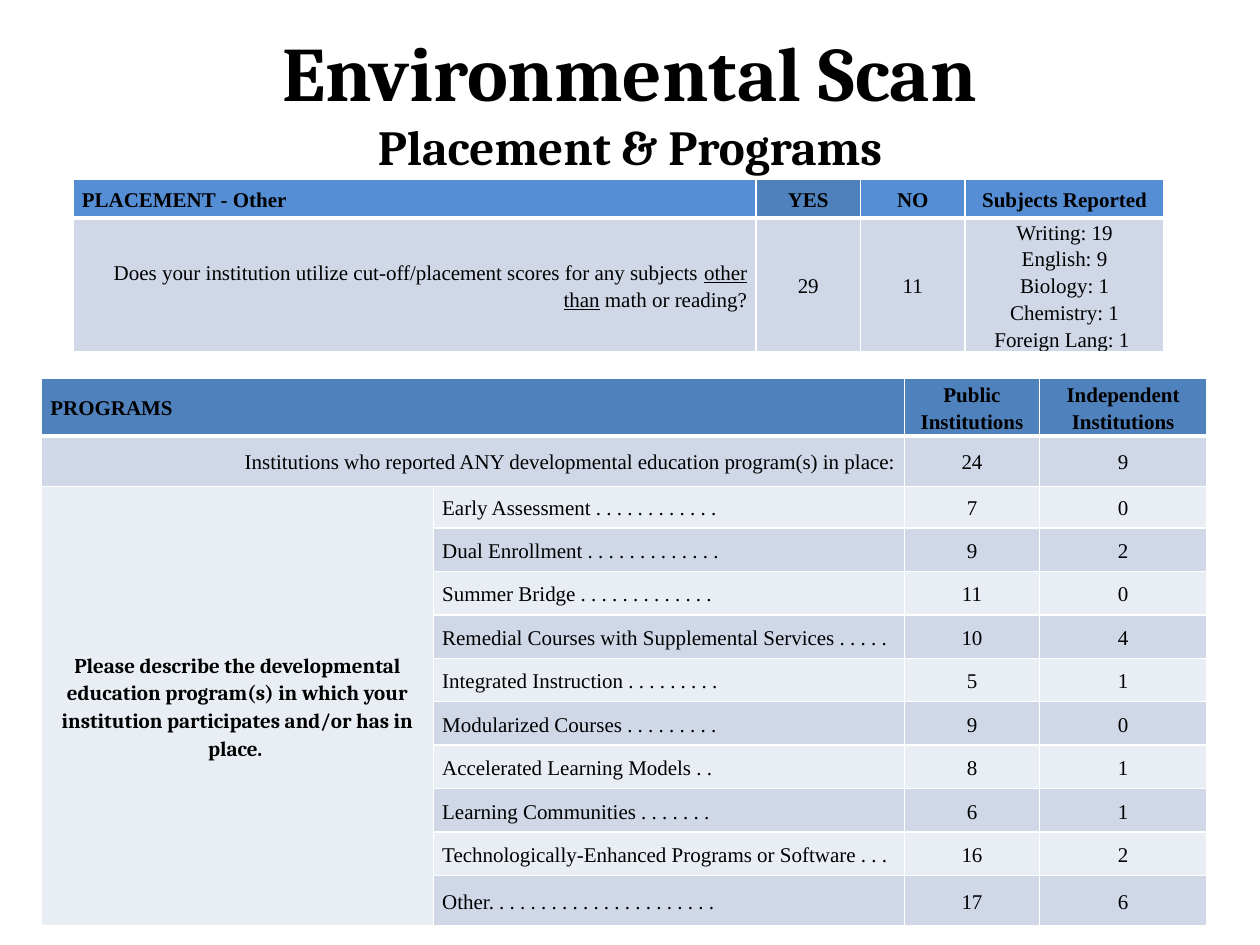
from lxml import etree
from pptx import Presentation
from pptx.dml.color import RGBColor
from pptx.enum import text
from pptx.oxml import ns
from pptx.util import Inches, Pt

COLORS = {"ink": "000000", "rule": "FFFFFF", "header": "4F81BD",
          "header_light": "558ED5", "band": "D0D8E8", "pale": "E9EDF4"}
LEFT, CENTER, RIGHT = text.PP_ALIGN.LEFT, text.PP_ALIGN.CENTER, text.PP_ALIGN.RIGHT
CELL_FORMAT = {"margin_left": Inches(0.07), "margin_right": Inches(0.07),
               "margin_top": 0, "margin_bottom": 0,
               "vertical_anchor": text.MSO_ANCHOR.MIDDLE}


def add_grid(left, top, columns, heights):
    grid = slide.shapes.add_table(
        len(heights), len(columns), Inches(left), Inches(top),
        Inches(sum(columns)), Inches(sum(heights))).table
    for column, width in zip(grid.columns, columns):
        column.width = Inches(width)
    for row, height in zip(grid.rows, heights):
        row.height = Inches(height)
    return grid


def fill_cell(cell, words, align, fill, bold=False, font="Times New Roman", bottom=1):
    for name, value in CELL_FORMAT.items():
        setattr(cell, name, value)
    properties = cell._tc.get_or_add_tcPr()
    for side, width in {"L": 1, "R": 1, "T": 1, "B": bottom}.items():
        line = etree.SubElement(properties, ns.qn(f"a:ln{side}"), w=str(Pt(width)))
        solid = etree.SubElement(line, ns.qn("a:solidFill"))
        etree.SubElement(solid, ns.qn("a:srgbClr"), val=COLORS["rule"])
    cell.fill.solid()
    cell.fill.fore_color.rgb = RGBColor.from_string(COLORS[fill])
    for index, sentence in enumerate(words.split("\n")):
        frame = cell.text_frame
        paragraph = frame.add_paragraph() if index else frame.paragraphs[0]
        paragraph.alignment = align
        paragraph.line_spacing = 1.15
        for part, phrase in enumerate(sentence.split("_")):
            run = paragraph.add_run()
            run.text = phrase
            run_format = {"name": font, "size": Pt(12), "bold": bold, "underline": part % 2 == 1}
            for name, value in run_format.items():
                setattr(run.font, name, value)
            run.font.color.rgb = RGBColor.from_string(COLORS["ink"])


deck = Presentation()
deck.slide_width, deck.slide_height = Inches(10), Inches(7.5)
slide = deck.slides.add_slide(deck.slide_layouts[5])

title = slide.shapes.title
title_place = {"left": 0.5, "top": 0.17, "width": 9, "height": 1.25}
for name, value in title_place.items():
    setattr(title, name, Inches(value))
title.text_frame.vertical_anchor = text.MSO_ANCHOR.MIDDLE
heading = title.text_frame.paragraphs[0]
heading.alignment = CENTER
for words, size in [("Environmental Scan", 44), ("Placement & Programs", 28)]:
    if heading.runs:
        heading.add_line_break()
    run = heading.add_run()
    run.text = words
    for name, value in {"name": "Cambria", "size": Pt(size), "bold": True}.items():
        setattr(run.font, name, value)
    run.font.color.rgb = RGBColor.from_string(COLORS["ink"])

placement = add_grid(0.58, 1.42, [5.42, 0.83, 0.83, 1.58], [0.31, 1.05])
placement_columns = [
    ("PLACEMENT - Other", LEFT, "header_light",
     "Does your institution utilize cut-off/placement scores for any subjects "
     "_other than_ math or reading?", RIGHT),
    ("YES", CENTER, "header", "29", CENTER),
    ("NO", CENTER, "header_light", "11", CENTER),
    ("Subjects Reported", CENTER, "header_light",
     "Writing: 19\nEnglish: 9\nBiology: 1\nChemistry: 1\nForeign Lang: 1 ", CENTER),
]
for column, (label, label_align, fill, answer, answer_align) in enumerate(placement_columns):
    fill_cell(placement.cell(0, column), label, label_align, fill, bold=True, bottom=3)
    fill_cell(placement.cell(1, column), answer, answer_align, "band")

program_counts = [
    ("Early Assessment . . . . . . . . . . . .", 7, 0),
    ("Dual Enrollment . . . . . . . . . . . . .", 9, 2),
    ("Summer Bridge . . . . . . . . . . . . .", 11, 0),
    ("Remedial Courses with Supplemental Services . . . . .", 10, 4),
    ("Integrated Instruction . . . . . . . . .", 5, 1),
    ("Modularized Courses . . . . . . . . .", 9, 0),
    ("Accelerated Learning Models . .", 8, 1),
    ("Learning Communities . . . . . . .", 6, 1),
    ("Technologically-Enhanced Programs or Software . . .", 16, 2),
    ("Other. . . . . . . . . . . . . . . . . . . . . .", 17, 6),
]
programs = add_grid(0.33, 3, [3.11, 3.74, 1.07, 1.33],
                    [0.46, 0.4, 0.33] + [0.345] * 8 + [0.4])
for first, last in [((0, 0), (0, 1)), ((1, 0), (1, 1)), ((2, 0), (11, 0))]:
    programs.cell(*first).merge(programs.cell(*last))

for column, label, align in [(0, "PROGRAMS", LEFT), (2, "Public Institutions", CENTER),
                             (3, "Independent Institutions", CENTER)]:
    fill_cell(programs.cell(0, column), label, align, "header", bold=True, bottom=3)
for column, label, align in [
        (0, "Institutions who reported ANY developmental education program(s) in place:", RIGHT),
        (2, "24", CENTER), (3, "9", CENTER)]:
    fill_cell(programs.cell(1, column), label, align, "band")
fill_cell(programs.cell(2, 0),
          "Please describe the developmental education program(s) in which your "
          "institution participates and/or has in place. ",
          CENTER, "pale", bold=True, font="Cambria")
for row, counts in enumerate(program_counts, start=2):
    for column, value in enumerate(counts, start=1):
        fill_cell(programs.cell(row, column), str(value),
                  LEFT if column == 1 else CENTER, "band" if row % 2 else "pale")

deck.save("out.pptx")
